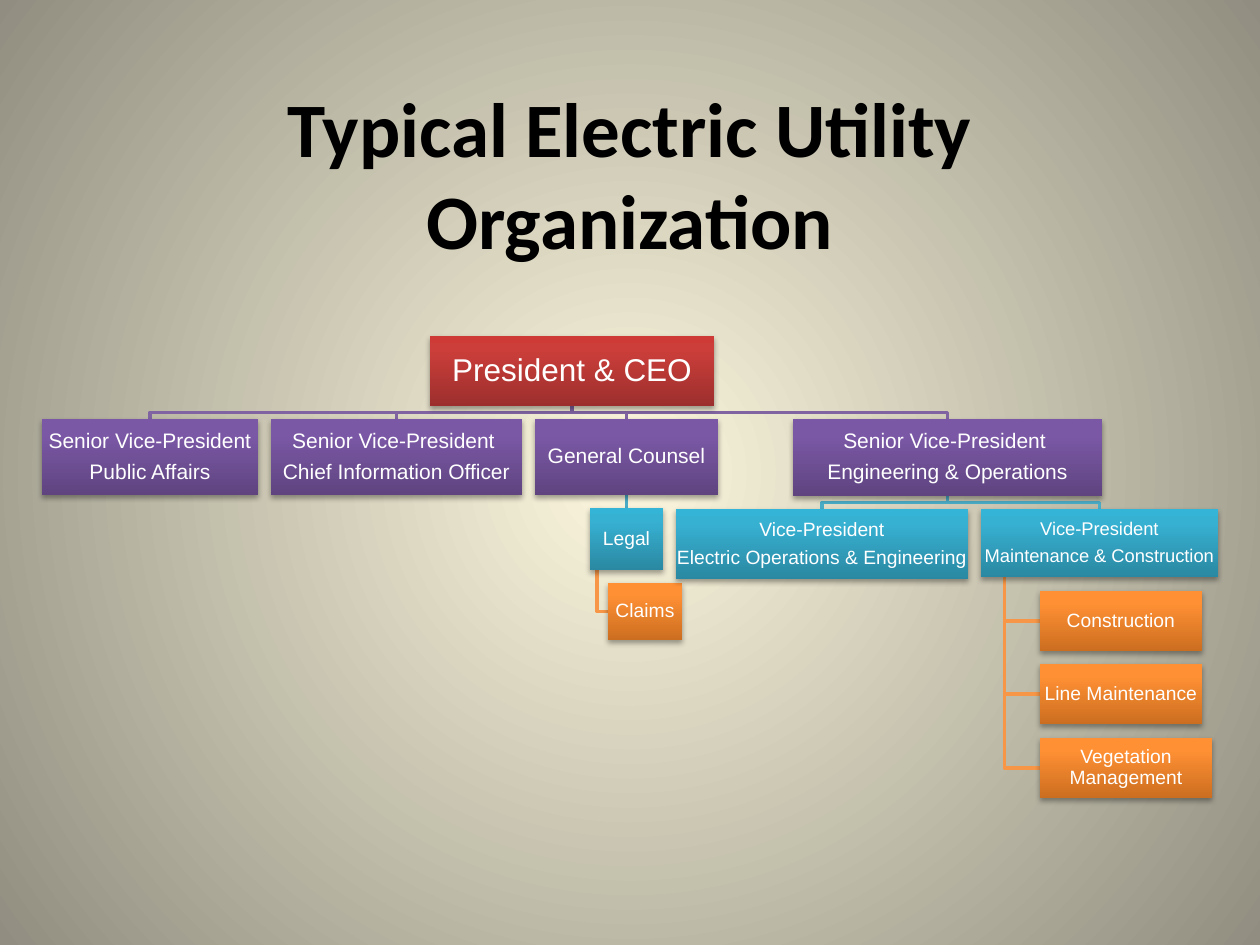
import pptx
import pptx.util
import pptx.dml.color
import pptx.enum.shapes
import pptx.enum.text
import pptx.oxml
import pptx.oxml.ns

PX = 914400 / 126
SLIDE_SIZE = (1260, 945)
TITLE = ["Typical Electric Utility", "Organization"]
TITLE_BOX = (21, 73, 1218, 199)

THEME = {
    "background": [(0, "FCF7DD"), (100, "918E81")],
    "title": {"name": "Calibri", "size": 44, "bold": True, "color": "000000"},
    "label": {"name": "Arial", "bold": False, "color": "FFFFFF"},
    "line_width": 2,
    "levels": {
        "president": {"fill": ("9C2F2D", "CB3E3A", "CE3B37"), "size": 18},
        "senior": {"fill": ("5F4480", "7B58A6", "7C57A8"), "line": "8064A2", "size": 12},
        "department": {"fill": ("2A88A2", "37B1D2", "34B4D6"), "line": "4BACC6", "size": 11},
        "team": {"fill": ("CC6E20", "FF9034", "FF9136"), "line": "F79646", "size": 11},
    },
}

POSITIONS = {
    "ceo": ("president", None, (430, 336, 284, 70), ["President & CEO"]),
    "affairs": ("senior", "ceo", (42, 419, 216, 76), ["Senior Vice-President", "Public Affairs"]),
    "information": ("senior", "ceo", (271, 419, 251, 76),
                    ["Senior Vice-President ", "Chief Information Officer"]),
    "counsel": ("senior", "ceo", (535, 419, 183, 76), ["General Counsel"]),
    "legal": ("department", "counsel", (590, 508, 73, 62), ["Legal"]),
    "claims": ("team", "legal", (608, 583, 74, 57), ["Claims"]),
    "engineering": ("senior", "ceo", (793, 419, 309, 77),
                    ["Senior Vice-President ", "Engineering & Operations"]),
    "electric": ("department", "engineering", (676, 509, 292, 70),
                 ["Vice-President", "Electric Operations & Engineering"]),
    "maintenance": ("department", "engineering", (981, 509, 237, 68),
                    ["Vice-President", "Maintenance & Construction"]),
    "construction": ("team", "maintenance", (1040, 591, 162, 60), ["Construction"]),
    "lines": ("team", "maintenance", (1040, 664, 162, 60), ["Line Maintenance"]),
    "vegetation": ("team", "maintenance", (1040, 738, 172, 60), ["Vegetation Management"]),
}
SIZE_EXCEPTIONS = {"maintenance": 10.5}


def emu(*lengths):
    return [pptx.util.Emu(round(length * PX)) for length in lengths]


def rgb(value):
    return pptx.dml.color.RGBColor.from_string(value)


def gradient(stops, direction):
    stop_xml = "".join(
        f'<a:gs pos="{position * 1000}"><a:srgbClr val="{color}"/></a:gs>' for position, color in stops
    )
    return pptx.oxml.parse_xml(
        f'<a:gradFill {pptx.oxml.ns.nsdecls("a")} rotWithShape="1">'
        f"<a:gsLst>{stop_xml}</a:gsLst>{direction}</a:gradFill>"
    )


def replace_solid(fill, container, new_fill):
    fill.solid()
    solid = container.find(".//" + pptx.oxml.ns.qn("a:solidFill"))
    solid.getparent().replace(solid, new_fill)


def add_effects(shape, content=""):
    properties = shape.element.spPr
    for effects in properties.findall(pptx.oxml.ns.qn("a:effectLst")):
        properties.remove(effects)
    properties.append(pptx.oxml.parse_xml(
        f'<a:effectLst {pptx.oxml.ns.nsdecls("a")}>{content}</a:effectLst>'
    ))


def write_text(shape, lines, font_values, inset=0, paragraph_values=None):
    frame = shape.text_frame
    frame_values = dict.fromkeys(
        ("margin_left", "margin_top", "margin_right", "margin_bottom"), emu(inset)[0]
    )
    frame_values.update(word_wrap=True, vertical_anchor=pptx.enum.text.MSO_ANCHOR.MIDDLE)
    for name, value in frame_values.items():
        setattr(frame, name, value)
    for index, line in enumerate(lines):
        paragraph = frame.add_paragraph() if index else frame.paragraphs[0]
        paragraph.alignment = pptx.enum.text.PP_ALIGN.CENTER
        for name, value in (paragraph_values or {}).items():
            setattr(paragraph, name, value)
        run = paragraph.add_run()
        run.text = line
        for name, value in font_values.items():
            if name == "color":
                run.font.color.rgb = rgb(value)
            else:
                setattr(run.font, name, pptx.util.Pt(value) if name == "size" else value)


def route(parent, child, hanging):
    left, top, width, height = parent
    child_left, child_top, child_width, child_height = child
    bottom = top + height
    if hanging:
        trunk, middle = left + width / 10, child_top + child_height / 2
        return [(trunk, bottom), (trunk, middle), (child_left, middle)]
    start, end = left + width / 2, child_left + child_width / 2
    if start == end:
        return [(start, bottom), (end, child_top)]
    bend = (bottom + child_top) / 2
    return [(start, bottom), (start, bend), (end, bend), (end, child_top)]


def add_link(slide, points, color):
    if len(points) == 2:
        link = slide.shapes.add_connector(
            pptx.enum.shapes.MSO_CONNECTOR.STRAIGHT, *emu(*points[0], *points[1])
        )
    else:
        builder = slide.shapes.build_freeform(*emu(*points[0]))
        builder.add_line_segments([emu(*point) for point in points[1:]], close=False)
        link = builder.convert_to_shape()
        link.fill.background()
    link.line.color.rgb = rgb(color)
    link.line.width = pptx.util.Pt(THEME["line_width"])
    add_effects(link)


def add_position(slide, box, lines, level, size):
    shape = slide.shapes.add_shape(pptx.enum.shapes.MSO_SHAPE.RECTANGLE, *emu(*box))
    stops = list(zip((0, 80, 100), level["fill"]))
    replace_solid(shape.fill, shape.element.spPr, gradient(stops, '<a:lin ang="16200000" scaled="0"/>'))
    shape.line.fill.background()
    add_effects(
        shape,
        '<a:outerShdw blurRad="40000" dist="23000" dir="5400000" rotWithShape="0">'
        '<a:srgbClr val="000000"><a:alpha val="35000"/></a:srgbClr></a:outerShdw>',
    )
    spacing = {"line_spacing": 0.9, "space_after": pptx.util.Pt(round(size * 0.4, 1))}
    write_text(shape, lines, {**THEME["label"], "size": size}, 1, spacing)


def main():
    presentation = pptx.Presentation()
    presentation.slide_width, presentation.slide_height = emu(*SLIDE_SIZE)
    slide = presentation.slides.add_slide(presentation.slide_layouts[6])
    center = '<a:path path="circle"><a:fillToRect l="50000" t="50000" r="50000" b="50000"/></a:path>'
    replace_solid(slide.background.fill, slide.element, gradient(THEME["background"], center))
    write_text(slide.shapes.add_textbox(*emu(*TITLE_BOX)), TITLE, THEME["title"])
    for level, parent, box, lines in POSITIONS.values():
        if parent:
            points = route(POSITIONS[parent][2], box, level == "team")
            add_link(slide, points, THEME["levels"][level]["line"])
    for name, (level, parent, box, lines) in POSITIONS.items():
        style = THEME["levels"][level]
        add_position(slide, box, lines, style, SIZE_EXCEPTIONS.get(name, style["size"]))
    presentation.save("out.pptx")


if __name__ == "__main__":
    main()
